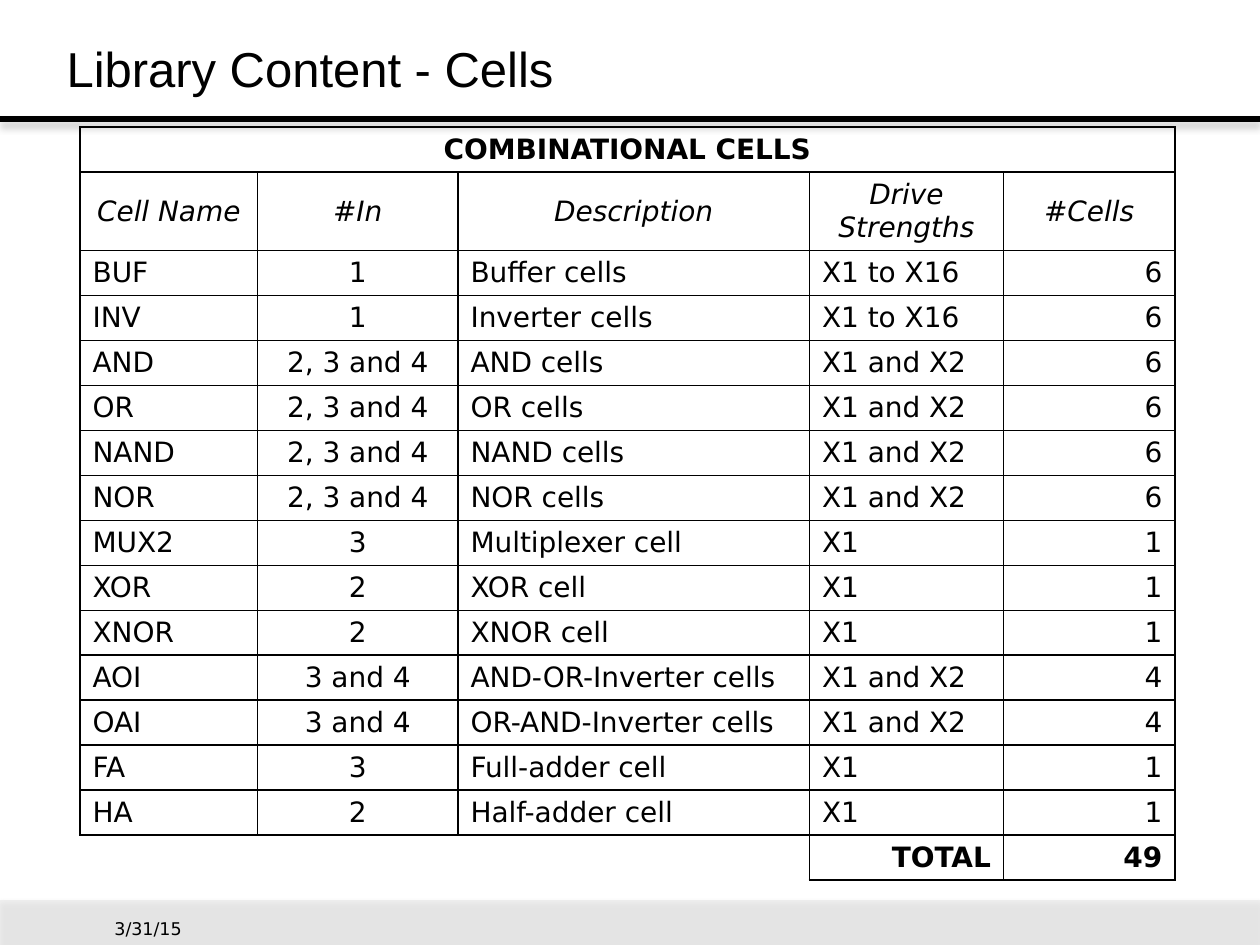
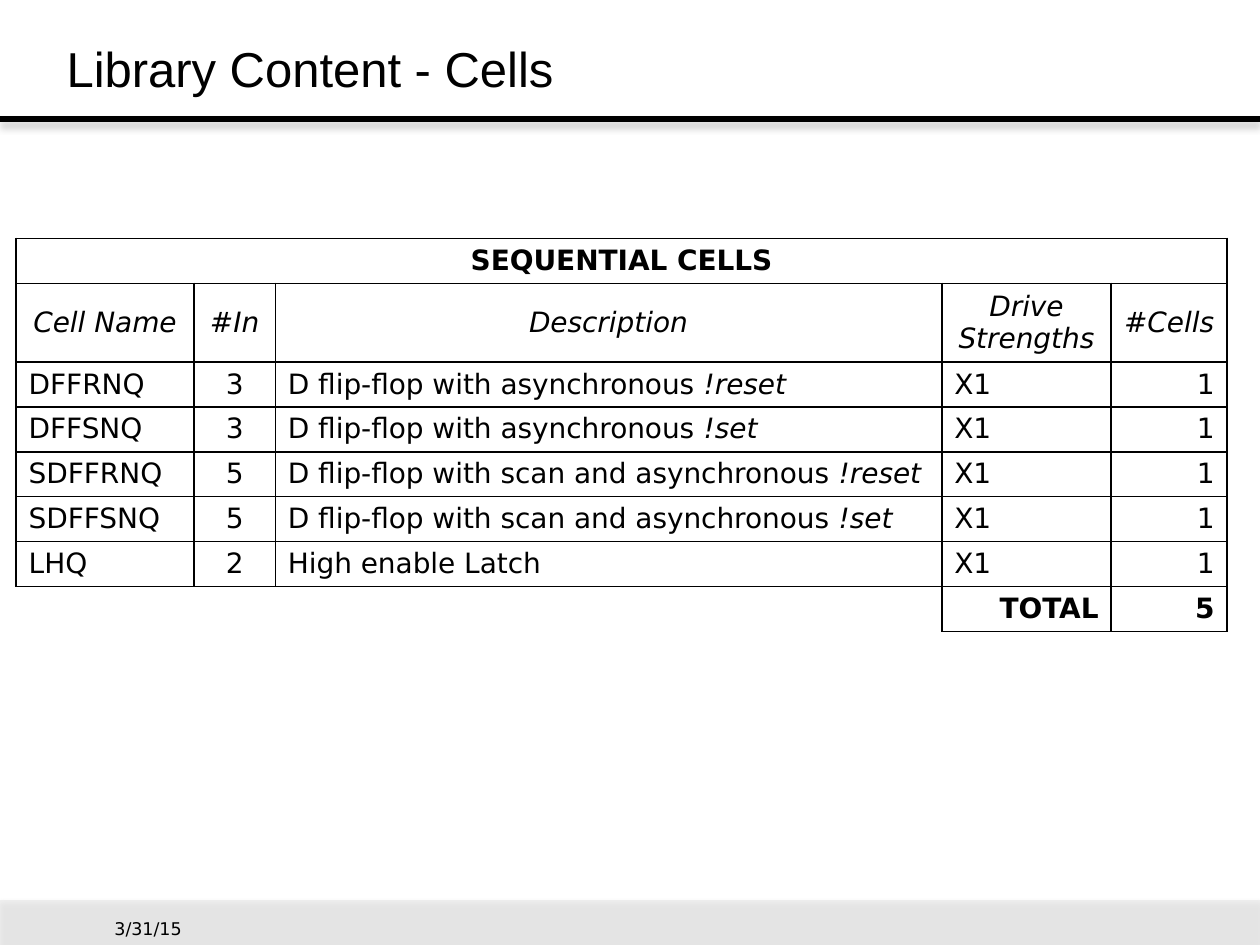
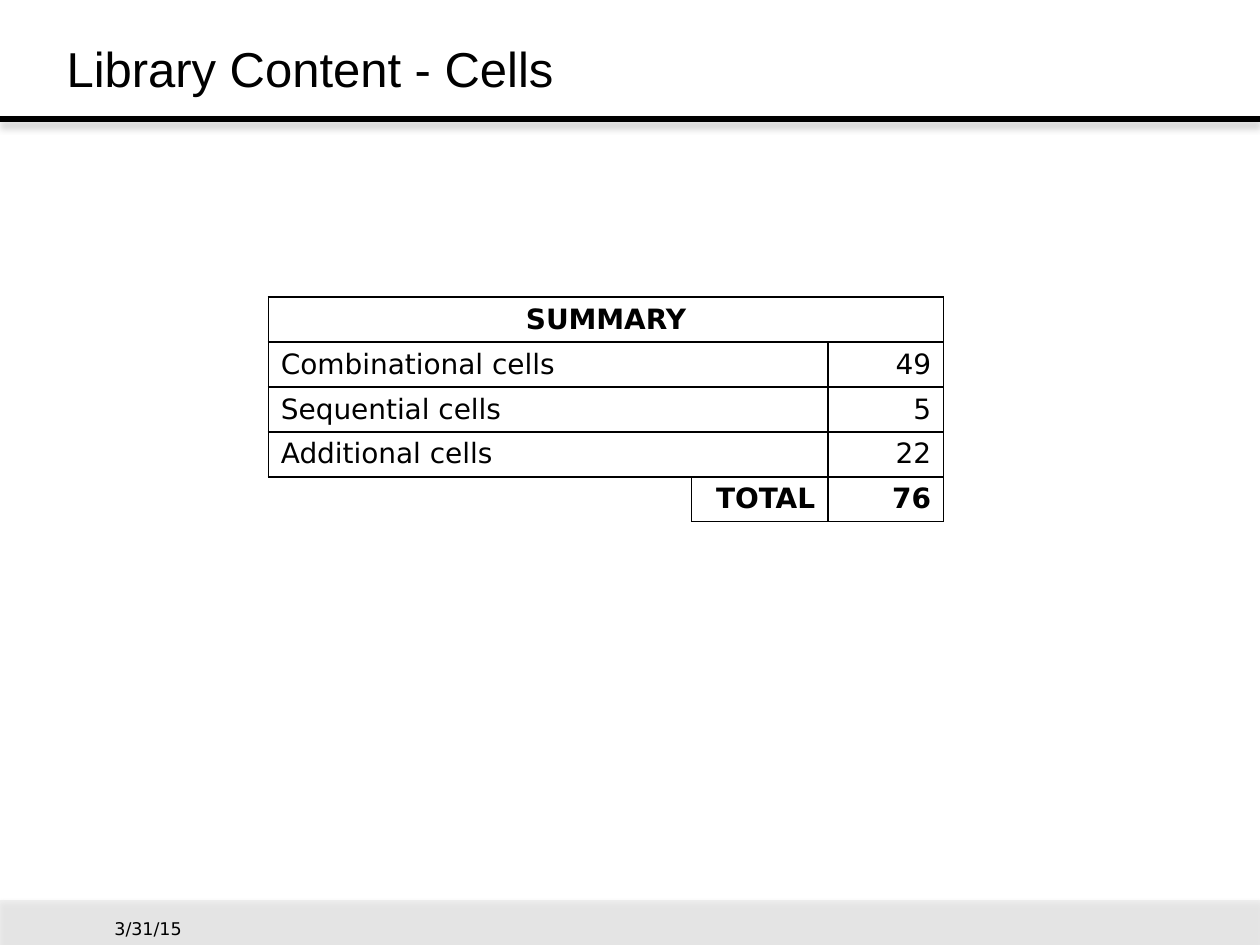
from dataclasses import dataclass

from lxml import etree
from pptx import Presentation
from pptx.dml.color import RGBColor
from pptx.enum.shapes import MSO_CONNECTOR, MSO_SHAPE
from pptx.enum.text import MSO_ANCHOR, PP_ALIGN
from pptx.oxml.ns import qn
from pptx.util import Inches, Pt

LEFT, CENTER, RIGHT = PP_ALIGN.LEFT, PP_ALIGN.CENTER, PP_ALIGN.RIGHT
MIDDLE, BOTTOM = MSO_ANCHOR.MIDDLE, MSO_ANCHOR.BOTTOM
RECTANGLE, STRAIGHT = MSO_SHAPE.RECTANGLE, MSO_CONNECTOR.STRAIGHT


@dataclass(frozen=True)
class Theme:
    ink: str = "000000"
    band: str = "E8E8E8"
    shadow: str = "808080"
    title_font: str = "Arial"
    body_font: str = "DejaVu Sans"
    title_size: int = 28
    table_size: int = 16
    date_size: int = 10
    rule_width: float = 3.5
    border_width: float = 1


theme = Theme()
INK = RGBColor.from_string(theme.ink)

deck = Presentation()
deck.slide_width, deck.slide_height = Inches(10), Inches(7.5)
COLUMN = deck.slide_width / 100
ROW = deck.slide_height / 75
RULE_ROW, BAND_ROW, BAND_ROWS = 9.44, 71.44, 3.56
LINE_ROWS, HEADER_ROWS, CELL_MARGIN_ROWS = 3.5, 6.1, 0.45

HEADER = ("Cell Name", "#In", "Description", "Drive Strengths", "#Cells")
CELL_ALIGNMENT = (LEFT, CENTER, LEFT, LEFT, RIGHT)

tables = [
    {
        "name": "COMBINATIONAL CELLS",
        "corner": (6.35, 10.1),
        "columns": (14.1, 15.9, 27.9, 15.4, 13.6),
        "alignment": CELL_ALIGNMENT,
        "header": [HEADER],
        "body": [
            ("BUF", "1", "Buffer cells", "X1 to X16", "6"),
            ("INV", "1", "Inverter cells", "X1 to X16", "6"),
            ("AND", "2, 3 and 4", "AND cells", "X1 and X2", "6"),
            ("OR", "2, 3 and 4", "OR cells", "X1 and X2", "6"),
            ("NAND", "2, 3 and 4", "NAND cells", "X1 and X2", "6"),
            ("NOR", "2, 3 and 4", "NOR cells", "X1 and X2", "6"),
            ("MUX2", "3", "Multiplexer cell", "X1", "1"),
            ("XOR", "2", "XOR cell", "X1", "1"),
            ("XNOR", "2", "XNOR cell", "X1", "1"),
            ("AOI", "3 and 4", "AND-OR-Inverter cells", "X1 and X2", "4"),
            ("OAI", "3 and 4", "OR-AND-Inverter cells", "X1 and X2", "4"),
            ("FA", "3", "Full-adder cell", "X1", "1"),
            ("HA", "2", "Half-adder cell", "X1", "1"),
        ],
    },
    {
        "name": "SEQUENTIAL CELLS",
        "corner": (1.28, 18.92),
        "columns": (14.12, 6.45, 52.9, 13.45, 9.2),
        "alignment": CELL_ALIGNMENT,
        "header": [HEADER],
        "body": [
            ("DFFRNQ", "3", "D flip-flop with asynchronous !reset", "X1", "1"),
            ("DFFSNQ", "3", "D flip-flop with asynchronous !set", "X1", "1"),
            ("SDFFRNQ", "5", "D flip-flop with scan and asynchronous !reset", "X1", "1"),
            ("SDFFSNQ", "5", "D flip-flop with scan and asynchronous !set", "X1", "1"),
            ("LHQ", "2", "High enable Latch", "X1", "1"),
        ],
    },
    {
        "name": "SUMMARY",
        "corner": (21.3, 23.57),
        "columns": (33.6, 10.8, 9.2),
        "alignment": (LEFT, RIGHT, RIGHT),
        "header": [],
        "body": [
            ("Combinational cells", "", "49"),
            ("Sequential cells", "", "5"),
            ("Additional cells", "", "22"),
        ],
    },
]


def add_child(parent, tag, **attributes):
    values = {key: str(value) for key, value in attributes.items()}
    return etree.SubElement(parent, qn(tag), values)


def style_paragraph(para, font, size, alignment):
    para.alignment = alignment
    for span in para.runs:
        span.font.name = font
        span.font.size = Pt(size)
        span.font.color.rgb = INK


for content in tables:
    page = deck.slides.add_slide(deck.slide_layouts[6])

    band = page.shapes.add_shape(
        RECTANGLE, 0, int(BAND_ROW * ROW), deck.slide_width, int(BAND_ROWS * ROW))
    band.fill.solid()
    band.fill.fore_color.rgb = RGBColor.from_string(theme.band)
    add_child(band.fill._xPr.find(qn("a:solidFill"))[0], "a:alpha", val=63000)
    band.line.fill.background()

    rule = page.shapes.add_connector(
        STRAIGHT, 0, int(RULE_ROW * ROW), deck.slide_width, int(RULE_ROW * ROW))
    rule.line.color.rgb = INK
    rule.line.width = Pt(theme.rule_width)

    for shape, opacity, blur, distance in ((band, 38, 3.1, 1.6), (rule, 40, 4, 3)):
        effects = add_child(shape._element.spPr, "a:effectLst")
        shadow = add_child(effects, "a:outerShdw", blurRad=Pt(blur), dist=Pt(distance),
                           dir=90 * 60000, algn="t", rotWithShape=0)
        tint = add_child(shadow, "a:srgbClr", val=theme.shadow)
        add_child(tint, "a:alpha", val=opacity * 1000)

    for text, font, size, anchor, wrap, left, top, width, height in (
        ("3/31/15", theme.body_font, theme.date_size, BOTTOM, False,
         5.9, BAND_ROW, 11.7, BAND_ROWS),
        ("Library Content - Cells", theme.title_font, theme.title_size, MIDDLE, True,
         0, 1.65, 49.2, 7.5),
    ):
        box = page.shapes.add_textbox(
            int(left * COLUMN), int(top * ROW), int(width * COLUMN), int(height * ROW))
        box.text_frame.word_wrap = wrap
        box.text_frame.vertical_anchor = anchor
        box.text_frame.text = text
        style_paragraph(box.text_frame.paragraphs[0], font, size, CENTER)

    count = len(content["columns"])
    blanks = ("",) * (count - 1)
    total = sum(int(entry[-1]) for entry in content["body"])
    rows = [(content["name"], *blanks), *content["header"], *content["body"],
            (*blanks[1:], "TOTAL", str(total))]
    last = len(rows) - 1
    heights = [HEADER_ROWS if entry == HEADER else LINE_ROWS for entry in rows]
    left, top = content["corner"]
    table = page.shapes.add_table(
        len(rows), count, int(left * COLUMN), int(top * ROW),
        int(sum(content["columns"]) * COLUMN), int(sum(heights) * ROW)).table
    table.first_row = table.horz_banding = False
    for index, width in enumerate(content["columns"]):
        table.columns[index].width = int(width * COLUMN)

    for row, entry in enumerate(rows):
        table.rows[row].height = int(heights[row] * ROW)
        for column, text in enumerate(entry):
            cell = table.cell(row, column)
            cell.vertical_anchor = MIDDLE
            cell.margin_top = cell.margin_bottom = int(CELL_MARGIN_ROWS * ROW)
            sides = "TR" if row == last and not text else "LRTB"
            properties = cell._tc.get_or_add_tcPr()
            for side in "LRTB":
                border = add_child(properties, f"a:ln{side}", w=Pt(theme.border_width))
                if side in sides:
                    add_child(add_child(border, "a:solidFill"), "a:srgbClr", val=theme.ink)
                else:
                    add_child(border, "a:noFill")
            cell.fill.background()

            para = cell.text_frame.paragraphs[0]
            if not text:
                add_child(para._p, "a:endParaRPr", sz=theme.table_size * 100)
                continue
            plain, mark, signal = text.partition("!")
            para.text = plain
            if mark:
                para.add_run().text = mark + signal
            alignment = content["alignment"][column]
            if row == 0 or entry == HEADER:
                alignment = CENTER
            elif row == last:
                alignment = RIGHT
            style_paragraph(para, theme.body_font, theme.table_size, alignment)
            for span in para.runs:
                span.font.bold = row in (0, last)
                span.font.italic = entry == HEADER or span.text.startswith("!")

        filled = [column for column, text in enumerate(entry) if text] + [count]
        starts = sorted({0, *filled})
        for start, end in zip(starts, starts[1:]):
            if end - start > 1:
                table.cell(row, start).merge(table.cell(row, end - 1))

deck.save("out.pptx")
